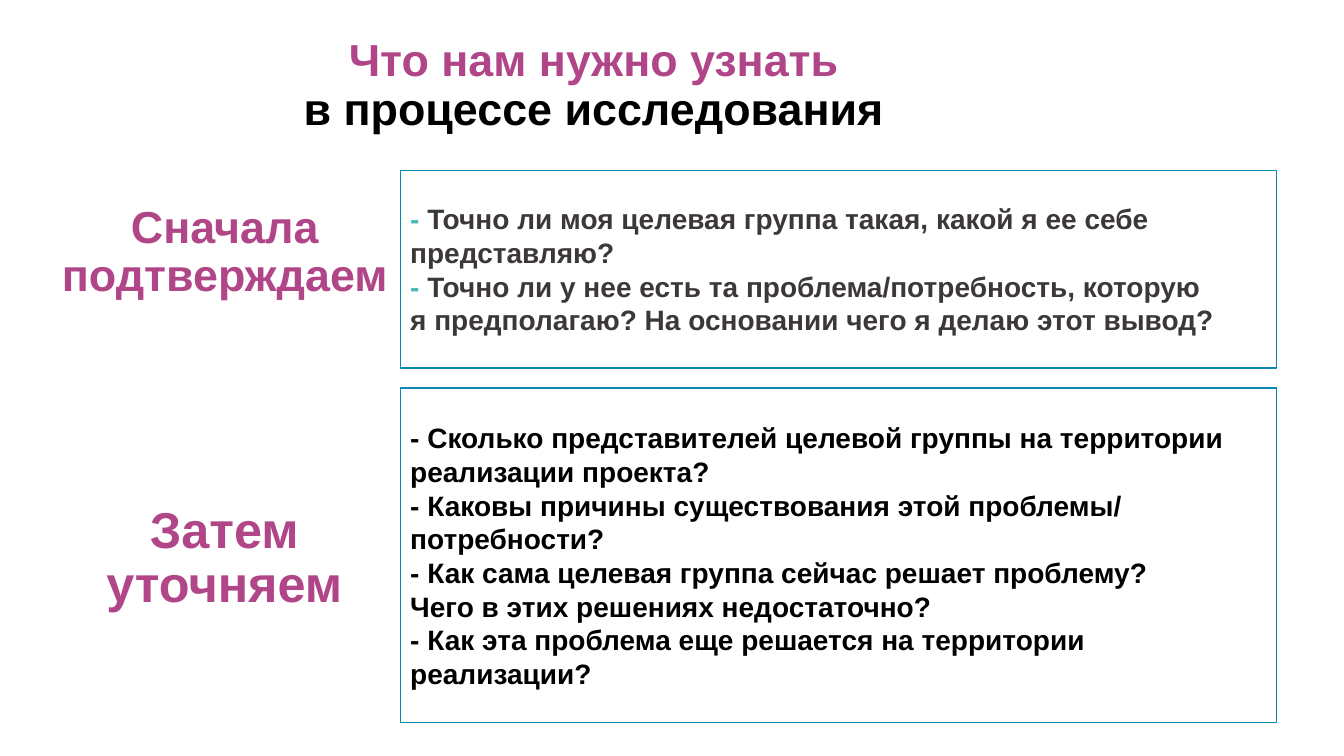
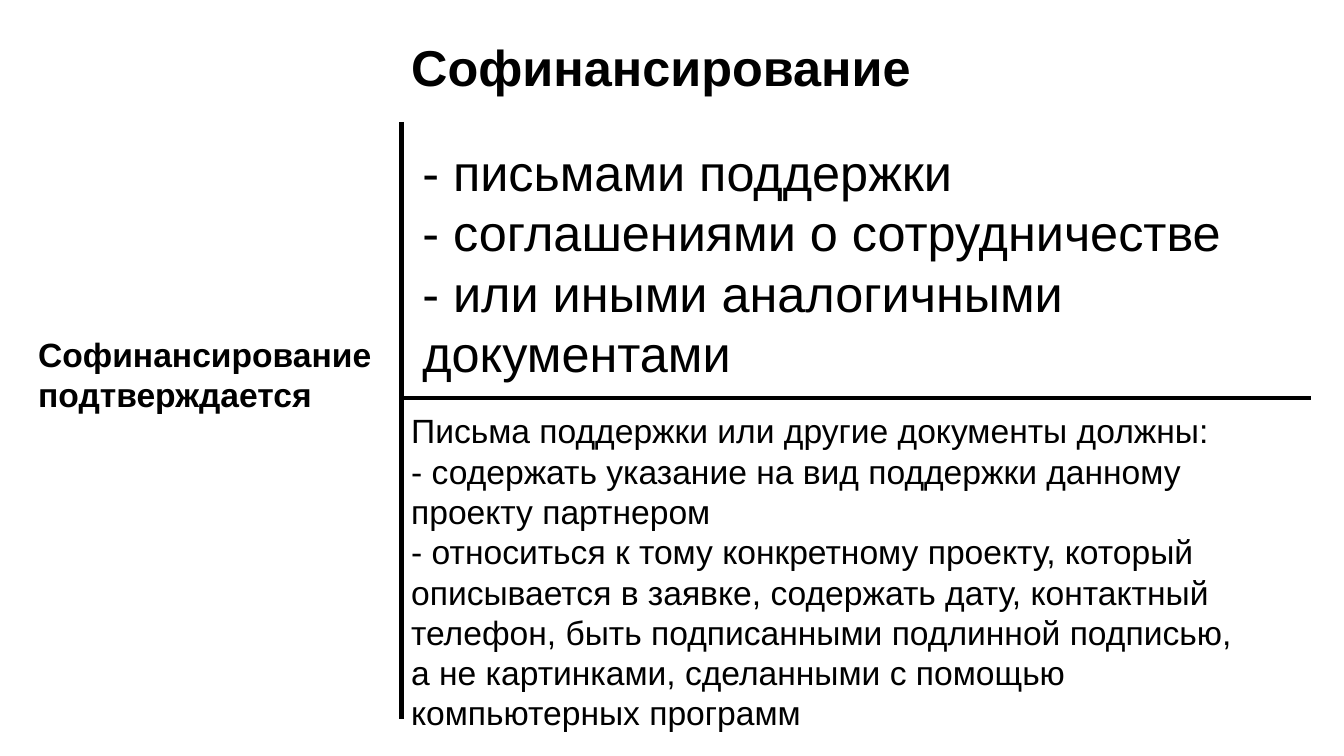
import pptx
import pptx.dml.color
import pptx.enum.shapes
import pptx.enum.text
import pptx.oxml.ns
import pptx.util
from lxml import etree
from pptx.util import Inches

FONT = "Arial"
BLACK, WHITE = "000000", "FFFFFF"
PURPLE, TEAL, GRAY, BLUE = "B04688", "48B8B4", "3C3837", "0989B1"
DIVIDER_X, DIVIDER_Y = 3.98, 3.95


def rgb(color):
    return pptx.dml.color.RGBColor.from_string(color)


def write_text(sp, paragraphs, size=24, color=BLACK, bold=False, align="LEFT",
               anchor="TOP", spacing=None):
    """Fill a shape; a paragraph is a string or a list of (text, color) runs."""
    tf = sp.text_frame
    tf.word_wrap = True
    tf.vertical_anchor = getattr(pptx.enum.text.MSO_ANCHOR, anchor)
    for i, runs in enumerate(paragraphs):
        p = tf.add_paragraph() if i else tf.paragraphs[0]
        p.alignment = getattr(pptx.enum.text.PP_ALIGN, align)
        if spacing:
            p.line_spacing = spacing
        if isinstance(runs, str):
            runs = [(runs, color)]
        for text, run_color in runs:
            for j, line in enumerate(text.split("\n")):
                if j:
                    p.add_line_break()
                if not line:
                    continue
                r = p.add_run()
                r.text = line
                r.font.name = FONT
                r.font.size = pptx.util.Pt(size)
                r.font.bold = bold
                r.font.color.rgb = rgb(run_color)


def add_text(s, box, paragraphs, **fmt):
    sp = s.shapes.add_textbox(*map(Inches, box))
    write_text(sp, paragraphs, **fmt)


def add_heading(s, box, paragraphs, size=32):
    add_text(s, box, paragraphs, size=size, color=PURPLE, bold=True,
             align="CENTER", spacing=0.9)


def add_question_box(s, top, height, paragraphs):
    sp = s.shapes.add_shape(pptx.enum.shapes.MSO_SHAPE.RECTANGLE, Inches(3.97),
                            Inches(top), Inches(8.69), Inches(height))
    sp.shadow.inherit = False
    sp.fill.solid()
    sp.fill.fore_color.rgb = rgb(WHITE)
    sp.line.color.rgb = rgb(BLUE)
    sp.line.width = pptx.util.Pt(1)
    write_text(sp, paragraphs, size=20, bold=True, anchor="MIDDLE")


def add_line(s, x1, y1, x2, y2):
    line = s.shapes.add_connector(pptx.enum.shapes.MSO_CONNECTOR.STRAIGHT,
                                  *map(Inches, (x1, y1, x2, y2)))
    line.line.color.rgb = rgb(BLACK)
    line.line.width = pptx.util.Pt(3.25)
    etree.SubElement(line._element.spPr, pptx.oxml.ns.qn("a:effectLst"))


def build_research_slide(s):
    add_heading(s, (0.67, 0.33, 10.44, 1.1), [[
        ("Что нам нужно узнать\n", PURPLE),
        ("в процессе исследования", BLACK)]])
    add_question_box(s, 1.69, 1.96, [
        [("- ", TEAL),
         ("Точно ли моя целевая группа такая, какой я ее себе", GRAY)],
        [("представляю?", GRAY)],
        [("- ", TEAL),
         ("Точно ли у нее есть та проблема/потребность, которую", GRAY)],
        [("я предполагаю? На основании чего я делаю этот вывод?", GRAY)]])
    add_question_box(s, 3.85, 3.32, [
        "- Сколько представителей целевой группы на территории",
        "реализации проекта?",
        "- Каковы причины существования этой проблемы/",
        "потребности?",
        "- Как сама целевая группа сейчас решает проблему?",
        "Чего в этих решениях недостаточно?",
        "- Как эта проблема еще решается на территории",
        "реализации?"])
    add_heading(s, (0.36, 1.98, 3.74, 1.1), ["Сначала", "подтверждаем"])
    add_heading(s, (0.67, 4.96, 3.11, 1.1), ["Затем", "уточняем"], size=36)


def build_cofinancing_slide(s):
    add_text(s, (4.09, 1.35, 8.72, 2.52), [
        "- письмами поддержки",
        "- соглашениями о сотрудничестве",
        "- или иными аналогичными документами"], size=36)
    add_text(s, (0.28, 3.26, 3.65, 0.91),
             ["Софинансирование подтверждается"], bold=True)
    add_line(s, DIVIDER_X, 1.21, DIVIDER_X, 7.13)
    add_line(s, 13, DIVIDER_Y, DIVIDER_X, DIVIDER_Y)
    add_text(s, (DIVIDER_X, 4.02, 8.8, 3.33), [
        "Письма поддержки или другие документы должны:",
        "- содержать указание на вид поддержки данному",
        "проекту партнером",
        "- относиться к тому конкретному проекту, который",
        "описывается в заявке, содержать дату, контактный",
        "телефон, быть подписанными подлинной подписью,",
        "а не картинками, сделанными с помощью",
        "компьютерных программ"])
    add_text(s, (DIVIDER_X, 0.31, 5.68, 0.71), ["Софинансирование"],
             size=36, bold=True)


def main():
    prs = pptx.Presentation()
    prs.slide_width, prs.slide_height = Inches(13.33), Inches(7.5)
    for build in (build_research_slide, build_cofinancing_slide):
        build(prs.slides.add_slide(prs.slide_layouts[6]))
    prs.save("out.pptx")


if __name__ == "__main__":
    main()
